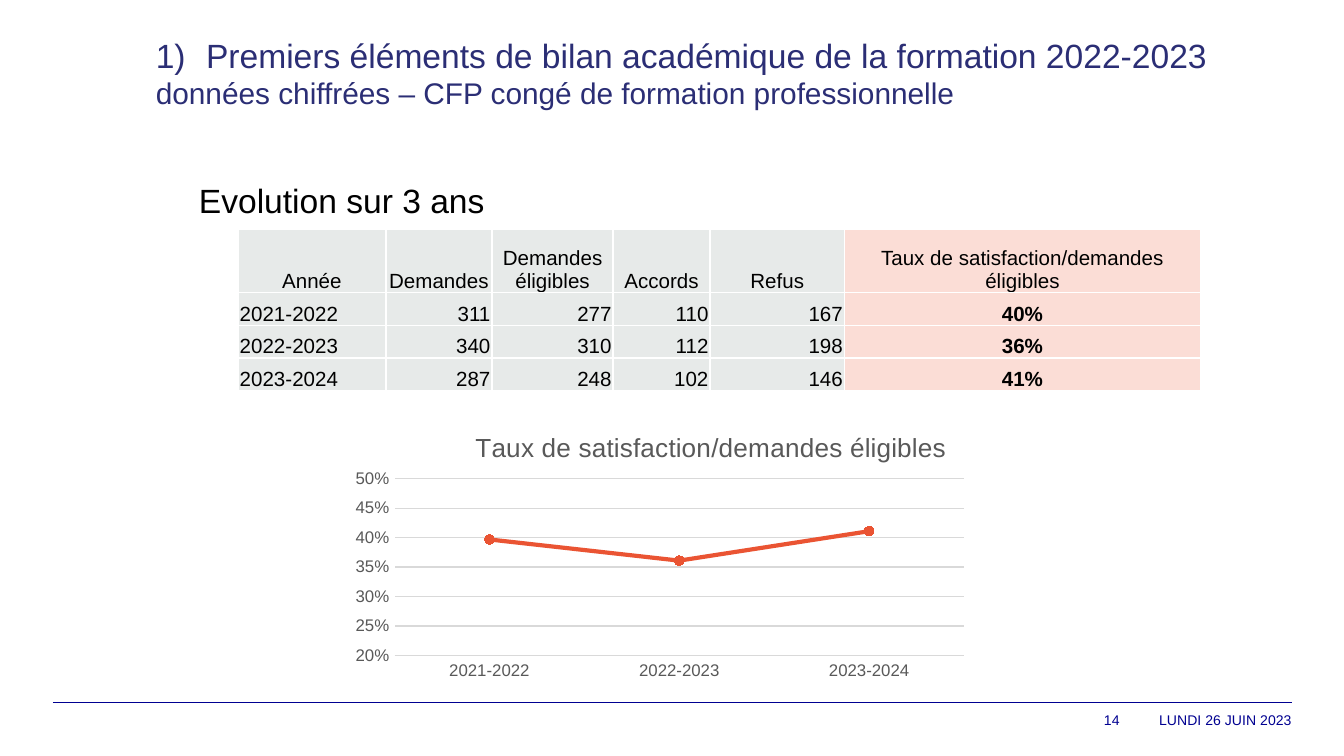
from lxml import etree
from pptx import Presentation
from pptx.chart.data import CategoryChartData
from pptx.dml.color import RGBColor
from pptx.enum.chart import XL_CHART_TYPE, XL_MARKER_STYLE, XL_TICK_MARK
from pptx.enum.shapes import MSO_CONNECTOR
from pptx.enum.text import MSO_ANCHOR, MSO_AUTO_SIZE, PP_ALIGN
from pptx.oxml import parse_xml
from pptx.oxml.ns import nsdecls, qn
from pptx.util import Cm, Pt

LEFT, CENTER, RIGHT = PP_ALIGN.LEFT, PP_ALIGN.CENTER, PP_ALIGN.RIGHT
TOP, MIDDLE, BOTTOM = MSO_ANCHOR.TOP, MSO_ANCHOR.MIDDLE, MSO_ANCHOR.BOTTOM
NO_AUTOFIT = MSO_AUTO_SIZE.NONE
LINE_MARKERS = XL_CHART_TYPE.LINE_MARKERS
CIRCLE = XL_MARKER_STYLE.CIRCLE
NO_TICK = XL_TICK_MARK.NONE
STRAIGHT = MSO_CONNECTOR.STRAIGHT

FONT = "Arial"
NAVY, INDIGO, BLACK, WHITE = "000091", "2B2E75", "000000", "FFFFFF"
PALE_GREY, PALE_RED = "E7EAE9", "FBDDD6"
DARK_GREY, GRID_GREY, ORANGE = "595959", "D9D9D9", "EA5433"

RATE = "Taux de satisfaction/demandes éligibles"
HEADINGS = ["Année", "Demandes", "Demandes éligibles", "Accords", "Refus", RATE]
YEARS = ["2021-2022", "2022-2023", "2023-2024"]
FIGURES = [
    ["311", "277", "110", "167", "40%"],
    ["340", "310", "112", "198", "36%"],
    ["287", "248", "102", "146", "41%"],
]
RATES = [0.397, 0.361, 0.411]
COLUMN_WIDTHS = [2.79, 2.01, 2.29, 1.83, 2.54, 6.73]
ROW_HEIGHTS = [1.19, 0.62, 0.62, 0.62]


def rgb(code):
    """Return the colour for a hex string."""
    return RGBColor.from_string(code)


def set_font(font, size, color, bold=False):
    """Give a font its face, size, colour and weight."""
    font.name = FONT
    font.size = Pt(size)
    font.bold = bold
    font.color.rgb = rgb(color)


def set_line(line, color, width):
    """Give a line its colour and width."""
    line.color.rgb = rgb(color)
    line.width = Pt(width)


def format_text(paragraph, size, color, align=LEFT, bold=False):
    """Align a paragraph and format its runs."""
    paragraph.alignment = align
    for run in paragraph.runs:
        set_font(run.font, size, color, bold)


def add_title(slide, heading, subheading):
    """Fill the title placeholder with a numbered heading and a subheading."""
    title = slide.shapes.title
    title.left, title.top, title.width, title.height = Cm(2.69), Cm(0.53), Cm(21.21), Cm(2.49)
    frame = title.text_frame
    frame.text = f"{heading}\n{subheading}"
    frame.auto_size = NO_AUTOFIT
    frame.vertical_anchor = TOP
    numbered = frame.paragraphs[0]._p.get_or_add_pPr()
    numbered.set("marL", str(Cm(0.95)))
    numbered.set("indent", str(-Cm(0.95)))
    etree.SubElement(numbered, qn("a:buFont"), typeface=FONT)
    etree.SubElement(numbered, qn("a:buAutoNum"), type="arabicParenR")
    for paragraph, size in zip(frame.paragraphs, (18, 16)):
        format_text(paragraph, size, INDIGO)


def add_text(slide, text, left, top, width, height, size, color, align=LEFT):
    """Add a wrapped one-paragraph text box and return its frame."""
    frame = slide.shapes.add_textbox(Cm(left), Cm(top), Cm(width), Cm(height)).text_frame
    frame.word_wrap = True
    frame.text = text
    format_text(frame.paragraphs[0], size, color, align)
    return frame


def add_footer(slide):
    """Draw the footer rule with the page number and date below it."""
    rule = slide.shapes.add_connector(STRAIGHT, Cm(1), Cm(13.28), Cm(24.41), Cm(13.28))
    set_line(rule.line, NAVY, 0.8)
    etree.SubElement(rule._element.spPr, qn("a:effectLst"))
    for text, left, width in (("14", 17.4, 3.76), ("LUNDI 26 JUIN 2023", 21.16, 3.25)):
        frame = add_text(slide, text, left, 13.28, width, 0.66, 7.5, NAVY, RIGHT)
        frame.margin_left = frame.margin_right = frame.margin_top = frame.margin_bottom = 0
        frame.vertical_anchor = MIDDLE


def set_borders(cell, color, width):
    """Draw all four borders of a cell."""
    properties = cell._tc.get_or_add_tcPr()
    for index, side in enumerate(("lnL", "lnR", "lnT", "lnB")):
        properties.insert(index, parse_xml(
            f'<a:{side} {nsdecls("a")} w="{Pt(width)}"><a:solidFill>'
            f'<a:srgbClr val="{color}"/></a:solidFill></a:{side}>'))


def fill_cell(cell, text, align, background, bold):
    """Write and format one table cell."""
    cell.text = text
    cell.margin_left = cell.margin_right = cell.margin_top = Cm(0.03)
    cell.margin_bottom = 0
    cell.vertical_anchor = BOTTOM
    cell.fill.solid()
    cell.fill.fore_color.rgb = rgb(background)
    set_borders(cell, WHITE, 1)
    format_text(cell.text_frame.paragraphs[0], 11, BLACK, align, bold)


def add_requests_table(slide):
    """Add the table of requests by year, with the rate column highlighted."""
    rows = [HEADINGS] + [[year, *figures] for year, figures in zip(YEARS, FIGURES)]
    table = slide.shapes.add_table(
        len(rows), len(HEADINGS), Cm(4.5), Cm(4.34),
        Cm(sum(COLUMN_WIDTHS)), Cm(sum(ROW_HEIGHTS))).table
    for column, width in zip(table.columns, COLUMN_WIDTHS):
        column.width = Cm(width)
    for row, height in zip(table.rows, ROW_HEIGHTS):
        row.height = Cm(height)
    rate_column = len(HEADINGS) - 1
    for r, row in enumerate(rows):
        for c, text in enumerate(row):
            is_rate = c == rate_column
            align = CENTER if r == 0 or is_rate else RIGHT if c else LEFT
            background = PALE_RED if is_rate else PALE_GREY
            fill_cell(table.cell(r, c), text, align, background, is_rate and r > 0)


def set_layout(parent, index, **values):
    """Place a chart part by fractions of the chart area."""
    for old in parent.findall(qn("c:layout")):
        parent.remove(old)
    layout = parse_xml(f'<c:layout {nsdecls("c")}><c:manualLayout/></c:layout>')
    for tag, value in values.items():
        etree.SubElement(layout[0], qn(f"c:{tag}"), val=str(value))
    parent.insert(index, layout)


def style_axis(axis):
    """Remove the tick marks and format the labels of an axis."""
    axis.major_tick_mark = axis.minor_tick_mark = NO_TICK
    set_font(axis.tick_labels.font, 9, DARK_GREY)


def add_rate_chart(slide):
    """Add the line chart of the satisfaction rate."""
    data = CategoryChartData(number_format="0%")
    data.categories = YEARS
    data.add_series(RATE, RATES)
    chart = slide.shapes.add_chart(
        LINE_MARKERS, Cm(6.5), Cm(7.67), Cm(11.96), Cm(5.31), data).chart
    set_font(chart.font, 10, BLACK)
    chart.has_legend = False
    title = chart.chart_title
    title.text_frame.text = RATE
    format_text(title.text_frame.paragraphs[0], 14, DARK_GREY, CENTER)
    set_layout(title._element, 1, xMode="edge", yMode="edge", x=0.2, y=0.07)
    set_layout(chart._chartSpace.chart.plotArea, 0, layoutTarget="inner",
               xMode="edge", yMode="edge", x=0.08, y=0.26, w=0.9, h=0.63)

    years, rates = chart.category_axis, chart.value_axis
    style_axis(years)
    set_line(years.format.line, GRID_GREY, 0.75)
    style_axis(rates)
    rates.format.line.fill.background()
    rates.minimum_scale, rates.maximum_scale, rates.major_unit = 0.2, 0.5, 0.05
    rates.tick_labels.number_format = "0%"
    rates.tick_labels.number_format_is_linked = False
    set_line(rates.major_gridlines.format.line, GRID_GREY, 0.75)

    plot = chart.plots[0]
    plot.vary_by_categories = False
    series = plot.series[0]
    series.smooth = False
    set_line(series.format.line, ORANGE, 2.25)
    series.marker.style = CIRCLE
    series.marker.size = 5
    series.marker.format.fill.solid()
    series.marker.format.fill.fore_color.rgb = rgb(ORANGE)
    set_line(series.marker.format.line, ORANGE, 0.75)


def main():
    """Build the slide and save it."""
    deck = Presentation()
    deck.slide_width, deck.slide_height = Cm(25.4), Cm(14.29)
    slide = deck.slides.add_slide(deck.slide_layouts[5])
    add_footer(slide)
    add_title(slide, "Premiers éléments de bilan académique de la formation 2022-2023",
              "données chiffrées – CFP congé de formation professionnelle")
    add_requests_table(slide)
    add_text(slide, "Evolution sur 3 ans", 3.51, 3.28, 12.6, 1.02, 18, BLACK)
    add_rate_chart(slide)
    deck.save("out.pptx")


if __name__ == "__main__":
    main()
